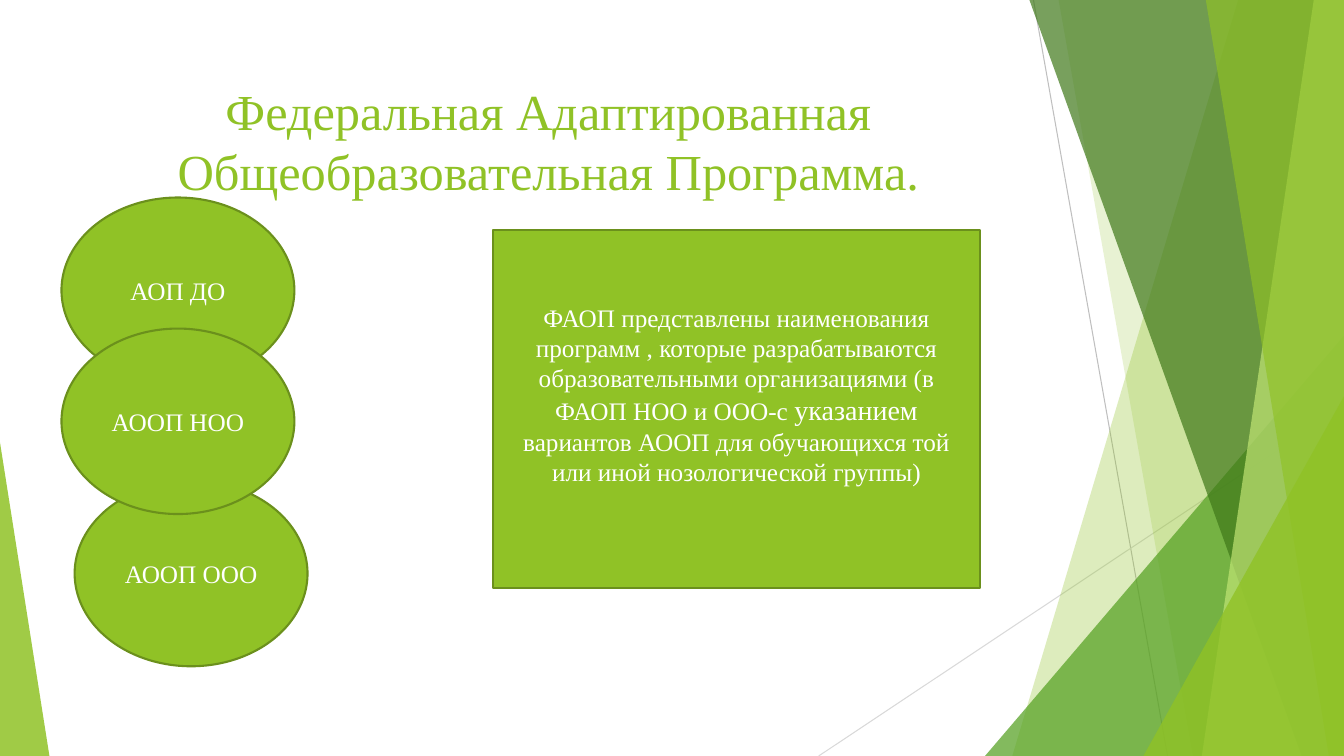
from lxml import etree
from pptx import Presentation
from pptx.dml.color import RGBColor
from pptx.enum.shapes import MSO_CONNECTOR as Connector, MSO_SHAPE as Shape
from pptx.enum.text import MSO_ANCHOR as Anchor, PP_ALIGN as Align
from pptx.oxml.ns import qn
from pptx.util import Inches, Pt

WIDTH, HEIGHT = 13.33, 7.5
GREEN, DARK_GREEN, WHITE = "90C226", "6B901C", "FFFFFF"
FONT = "Times New Roman"


def color(hex_code):
    return RGBColor.from_string(hex_code)


def paint(shape, fill, opacity=100, outline=None):
    shape.shadow.inherit = False
    shape.fill.solid()
    shape.fill.fore_color.rgb = color(fill)
    if opacity < 100:
        tint = shape.fill._xPr.find(qn("a:solidFill"))[0]
        etree.SubElement(tint, qn("a:alpha"), val=str(opacity * 1000))
    if outline:
        shape.line.color.rgb = color(outline)
        shape.line.width = Pt(1.5)
    else:
        shape.line.fill.background()


def write(shape, spans, text_color=WHITE, **frame_format):
    """Fill a shape with one centred paragraph of (text, size) spans."""
    frame = shape.text_frame
    settings = {"word_wrap": True, "vertical_anchor": Anchor.MIDDLE, **frame_format}
    for name, value in settings.items():
        setattr(frame, name, value)
    para = frame.paragraphs[0]
    para.alignment = Align.CENTER
    for text, size in spans:
        span = para.add_run()
        span.text = text
        for name, value in {"name": FONT, "size": Pt(size)}.items():
            setattr(span.font, name, value)
        span.font.color.rgb = color(text_color)


def add_hairline(page, start, end, line_color):
    line = page.shapes.add_connector(
        Connector.STRAIGHT, *(Inches(value) for value in (*start, *end)))
    line.line.color.rgb = color(line_color)
    line.line.width = Pt(0.75)
    etree.SubElement(line._element.spPr, qn("a:effectLst"))


def add_band(page, top_left, bottom_left, fill, opacity):
    """Add a full-height band from a slanted left edge to the right slide edge."""
    corners = [(top_left, 0), (WIDTH, 0), (WIDTH, HEIGHT), (bottom_left, HEIGHT)]
    points = [(Inches(x), Inches(y)) for x, y in corners]
    outline = page.shapes.build_freeform(*points[0])
    outline.add_line_segments(points[1:], close=True)
    paint(outline.convert_to_shape(), fill, opacity)


def add_wedge(page, left, width, height, apex, fill, opacity):
    """Add a triangle that stands on the bottom edge of the slide."""
    wedge = page.shapes.add_shape(
        Shape.ISOSCELES_TRIANGLE, Inches(left), Inches(HEIGHT - height),
        Inches(width), Inches(height))
    wedge.adjustments[0] = apex
    paint(wedge, fill, opacity)


def add_backdrop(page):
    add_hairline(page, (10.25, 0), (11.58, HEIGHT), "BFBFBF")
    add_hairline(page, (WIDTH, 4.03), (8.12, HEIGHT), "D9D9D9")
    add_band(page, 12.28, 10.04, GREEN, 30)
    add_band(page, 10.5, 11.83, GREEN, 20)
    add_wedge(page, 9.77, 3.56, 4.17, 1, "54A021", 72)
    add_band(page, 10.21, 12.91, "3F7819", 70)
    add_band(page, 13.03, 11.92, "C0E474", 70)
    add_band(page, 11.96, 13.18, GREEN, 65)
    add_wedge(page, 11.34, 1.99, 3.57, 1, GREEN, 80)
    add_wedge(page, 0, 0.49, 3.11, 0, GREEN, 85)


def add_title(page, left, top, width, height):
    box = page.shapes.add_textbox(*map(Inches, (left, top, width, height)))
    write(box, [("Федеральная Адаптированная Общеобразовательная Программа.", 36)], GREEN)


def add_programs(page, left, top):
    """Stack the program ovals, with the middle one in front."""
    ovals = [("АОП ДО", 0, 0), ("АООП ООО", 0.13, 2.81), ("АООП НОО", 0, 1.3)]
    for label, shift, drop in ovals:
        oval = page.shapes.add_shape(
            Shape.OVAL, Inches(left + shift), Inches(top + drop),
            Inches(2.31), Inches(1.84))
        paint(oval, GREEN, outline=DARK_GREEN)
        write(oval, [(label, 18)])


def add_explanation(page, left, top, width, height):
    panel = page.shapes.add_shape(
        Shape.RECTANGLE, *map(Inches, (left, top, width, height)))
    paint(panel, GREEN, outline=DARK_GREEN)
    write(panel, [
        ("ФАОП представлены наименования программ , которые разрабатываются "
         "образовательными организациями (в ФАОП НОО и ООО-с ", 18),
        ("указанием", 20),
        (" вариантов АООП для обучающихся той или иной нозологической группы)", 18),
    ], margin_bottom=Inches(0.33))


def main():
    deck = Presentation()
    deck.slide_width, deck.slide_height = Inches(WIDTH), Inches(HEIGHT)
    page = deck.slides.add_slide(deck.slide_layouts[6])
    add_backdrop(page)
    add_title(page, 0.74, 0.67, 9.4, 1.44)
    add_programs(page, 0.61, 1.96)
    add_explanation(page, 4.89, 2.28, 4.83, 3.55)
    deck.save("out.pptx")


if __name__ == "__main__":
    main()
